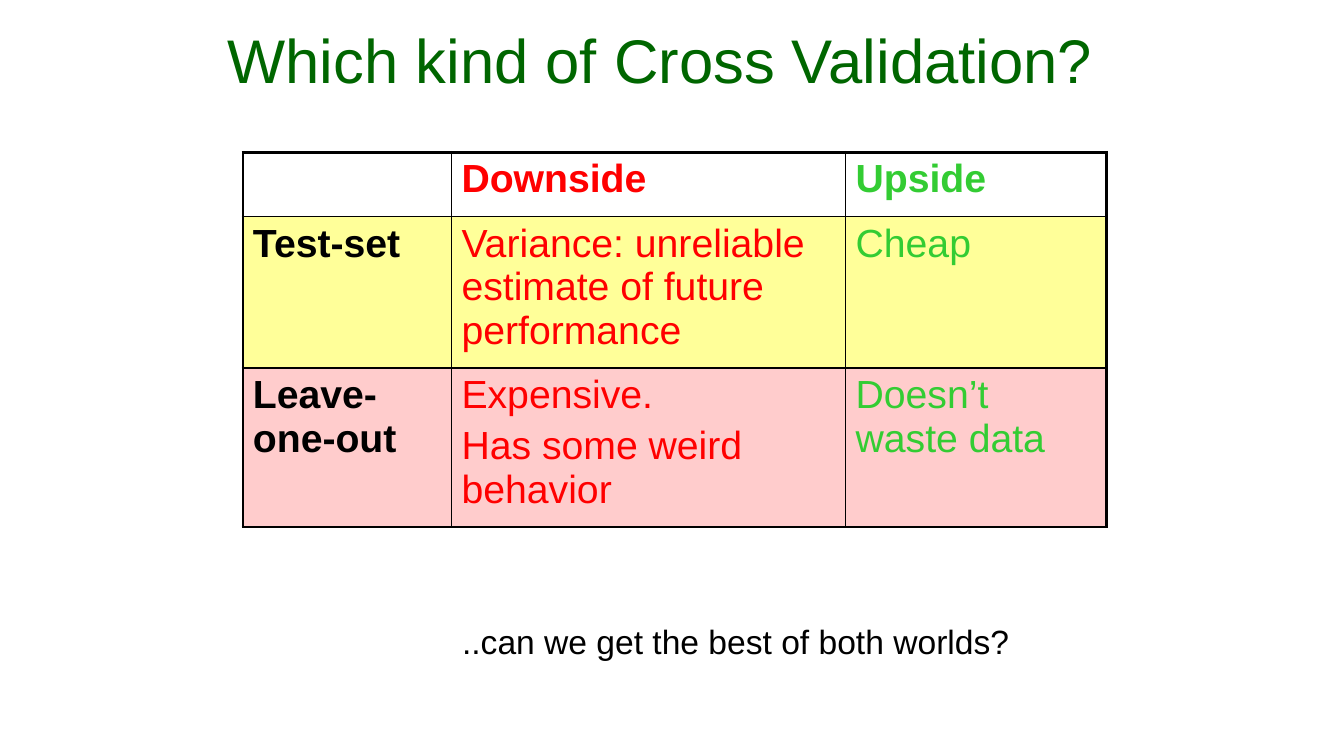
import pptx
import pptx.dml.color
import pptx.enum.text
import pptx.oxml
import pptx.oxml.ns
import pptx.util

Pt = pptx.util.Pt
RGBColor = pptx.dml.color.RGBColor
PP_ALIGN = pptx.enum.text.PP_ALIGN
MSO_ANCHOR = pptx.enum.text.MSO_ANCHOR

BLACK = RGBColor(0x00, 0x00, 0x00)
WHITE = RGBColor(0xFF, 0xFF, 0xFF)
DARK_GREEN = RGBColor(0x00, 0x66, 0x00)
GREEN = RGBColor(0x33, 0xCC, 0x33)
RED = RGBColor(0xFF, 0x00, 0x00)
YELLOW = RGBColor(0xFF, 0xFF, 0x99)
PINK = RGBColor(0xFF, 0xCC, 0xCC)


def write_text(frame, text, size=28, color=BLACK, bold=False,
               align=PP_ALIGN.LEFT, anchor=MSO_ANCHOR.TOP, gap=0):
    frame.word_wrap = True
    frame.vertical_anchor = anchor
    frame.text = text
    for index, paragraph in enumerate(frame.paragraphs):
        paragraph.alignment = align
        if index > 0:
            paragraph.space_before = Pt(gap)
        paragraph.font.name = "Arial"
        paragraph.font.size = Pt(size)
        paragraph.font.bold = bold
        paragraph.font.color.rgb = color


def add_border(cell, side, width):
    cell._tc.get_or_add_tcPr().append(pptx.oxml.parse_xml(
        f'<a:{side} {pptx.oxml.ns.nsdecls("a")} w="{Pt(width)}">'
        f'<a:solidFill><a:srgbClr val="{BLACK}"/></a:solidFill></a:{side}>'))


presentation = pptx.Presentation()
presentation.slide_width = Pt(960)
presentation.slide_height = Pt(540)
slide = presentation.slides.add_slide(presentation.slide_layouts[6])
slide.background.fill.solid()
slide.background.fill.fore_color.rgb = WHITE

title = slide.shapes.add_textbox(Pt(24), Pt(12), Pt(895.5), Pt(60))
write_text(title.text_frame, "Which kind of Cross Validation?", size=44,
           color=DARK_GREEN, align=PP_ALIGN.CENTER, anchor=MSO_ANCHOR.BOTTOM)

rows = [
    ["", "Downside", "Upside"],
    ["Test-set", "Variance: unreliable estimate of future performance", "Cheap"],
    ["Leave-one-out", "Expensive.\nHas some weird behavior", "Doesn’t waste data"],
]
row_heights = [46, 106.5, 106.5]
row_fills = [None, YELLOW, PINK]
column_widths = [149, 281.5, 186.5]
column_colors = [BLACK, RED, GREEN]

table = slide.shapes.add_table(
    len(rows), len(column_widths), Pt(173.5), Pt(108.75),
    Pt(sum(column_widths)), Pt(sum(row_heights))).table
table.first_row = False
table.horz_banding = False
for column, width in zip(table.columns, column_widths):
    column.width = Pt(width)

last_row = len(rows) - 1
last_column = len(column_widths) - 1
for row_index, texts in enumerate(rows):
    table.rows[row_index].height = Pt(row_heights[row_index])
    for column_index, text in enumerate(texts):
        cell = table.cell(row_index, column_index)
        write_text(cell.text_frame, text, color=column_colors[column_index],
                   bold=row_index == 0 or column_index == 0, gap=5.6)
        outer_sides = {
            "lnL": column_index == 0,
            "lnR": column_index == last_column,
            "lnT": row_index == 0,
            "lnB": row_index == last_row,
        }
        for side, is_outer in outer_sides.items():
            add_border(cell, side, 2.25 if is_outer else 1)
        if row_fills[row_index] is None:
            cell.fill.background()
        else:
            cell.fill.solid()
            cell.fill.fore_color.rgb = row_fills[row_index]

question = slide.shapes.add_textbox(Pt(256.5), Pt(440), Pt(538), Pt(36))
write_text(question.text_frame, "..can we get the best of both worlds?",
           size=24, align=PP_ALIGN.CENTER)

presentation.save("out.pptx")
